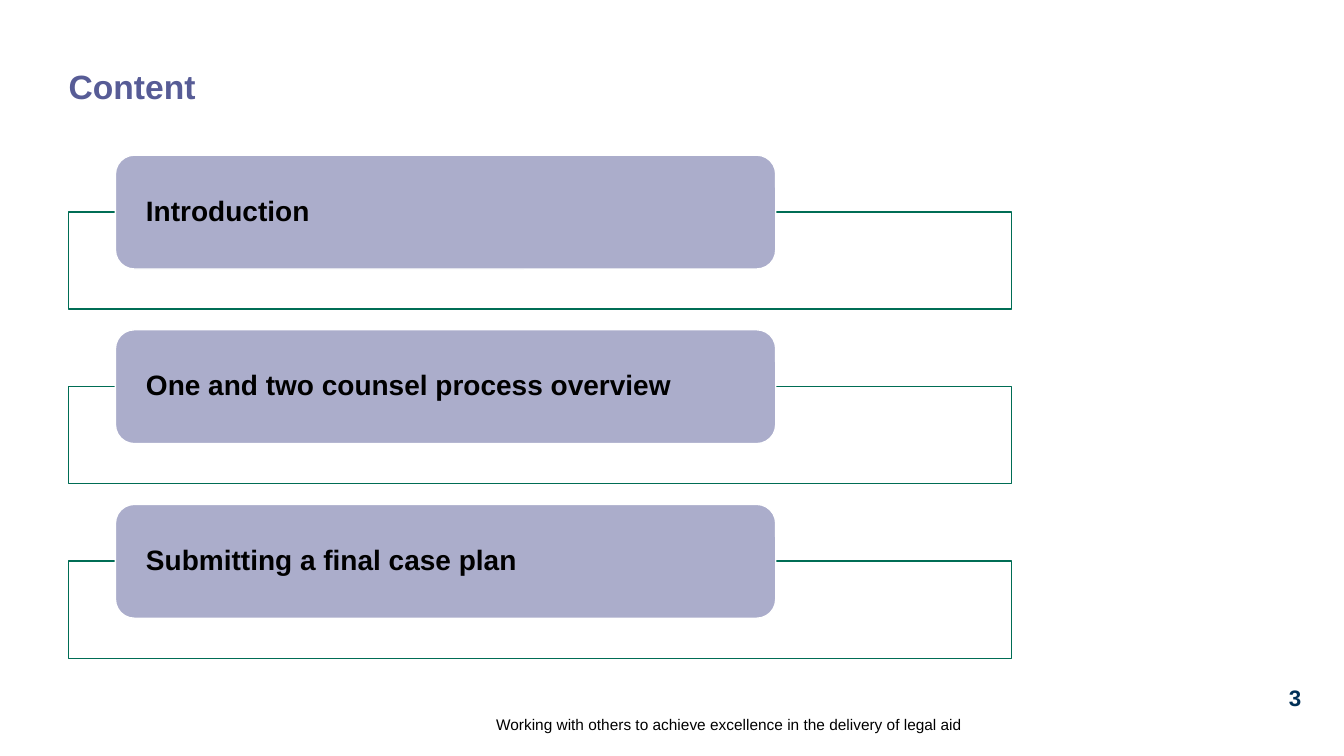
from pptx import Presentation
from pptx.dml.color import RGBColor
from pptx.enum.shapes import MSO_SHAPE
from pptx.enum.text import MSO_ANCHOR, PP_ALIGN
from pptx.util import Cm, Pt

WHITE = RGBColor(0xFF, 0xFF, 0xFF)
BLACK = RGBColor(0x00, 0x00, 0x00)
PURPLE = RGBColor(0x57, 0x5C, 0x96)
LILAC = RGBColor(0xAB, 0xAD, 0xCB)
GREEN = RGBColor(0x00, 0x6D, 0x55)
NAVY = RGBColor(0x00, 0x30, 0x57)

TOPICS = [
    "Introduction",
    "One and two counsel process overview",
    "Submitting a final case plan",
]
LEFT = 1.73
FIRST = 3.91
PITCH = 4.4


def set_text(shape, text, size, color, bold=True, align=PP_ALIGN.LEFT,
             anchor=MSO_ANCHOR.TOP, inset=0, spacing=1.0):
    frame = shape.text_frame
    frame.word_wrap = True
    frame.vertical_anchor = anchor
    frame.margin_left = frame.margin_right = Cm(inset)
    frame.margin_top = frame.margin_bottom = 0
    frame.text = text
    para = frame.paragraphs[0]
    para.alignment = align
    para.line_spacing = spacing
    font = para.runs[0].font
    font.name = "Arial"
    font.size = Pt(size)
    font.bold = bold
    font.color.rgb = color


def add_text(slide, box, text, size, color, **style):
    shape = slide.shapes.add_textbox(*map(Cm, box))
    set_text(shape, text, size, color, **style)


def add_panel(slide, kind, box, fill, line):
    panel = slide.shapes.add_shape(kind, *map(Cm, box))
    panel.shadow.inherit = False
    panel.fill.solid()
    panel.fill.fore_color.rgb = fill
    panel.line.color.rgb = line
    panel.line.width = Pt(1)
    return panel


def add_topic(slide, top, text):
    """Add a framed strip with the topic's label overlapping its upper edge."""
    add_panel(slide, MSO_SHAPE.RECTANGLE,
              (LEFT, top + 1.43, 23.77, 2.45), WHITE, GREEN)
    label = add_panel(slide, MSO_SHAPE.ROUNDED_RECTANGLE,
                      (2.91, top, 16.64, 2.87), LILAC, WHITE)
    set_text(label, text, 20, BLACK, anchor=MSO_ANCHOR.MIDDLE,
             inset=0.63, spacing=0.9)


def main():
    deck = Presentation()
    deck.slide_width, deck.slide_height = Cm(33.87), Cm(19.05)
    slide = deck.slides.add_slide(deck.slide_layouts[6])

    add_text(slide, (LEFT, 1.78, 21.44, 0.97), "Content", 24, PURPLE,
             spacing=0.9)
    for row, topic in enumerate(TOPICS):
        add_topic(slide, FIRST + row * PITCH, topic)
    add_text(slide, (5.33, 17.58, 18.92, 0.91),
             "Working with others to achieve excellence in the delivery of legal aid",
             11, BLACK, bold=False, align=PP_ALIGN.RIGHT,
             anchor=MSO_ANCHOR.BOTTOM)
    add_text(slide, (32.26, 17.25, 0.76, 0.71), "3", 16, NAVY,
             align=PP_ALIGN.CENTER)
    deck.save("out.pptx")


if __name__ == "__main__":
    main()
